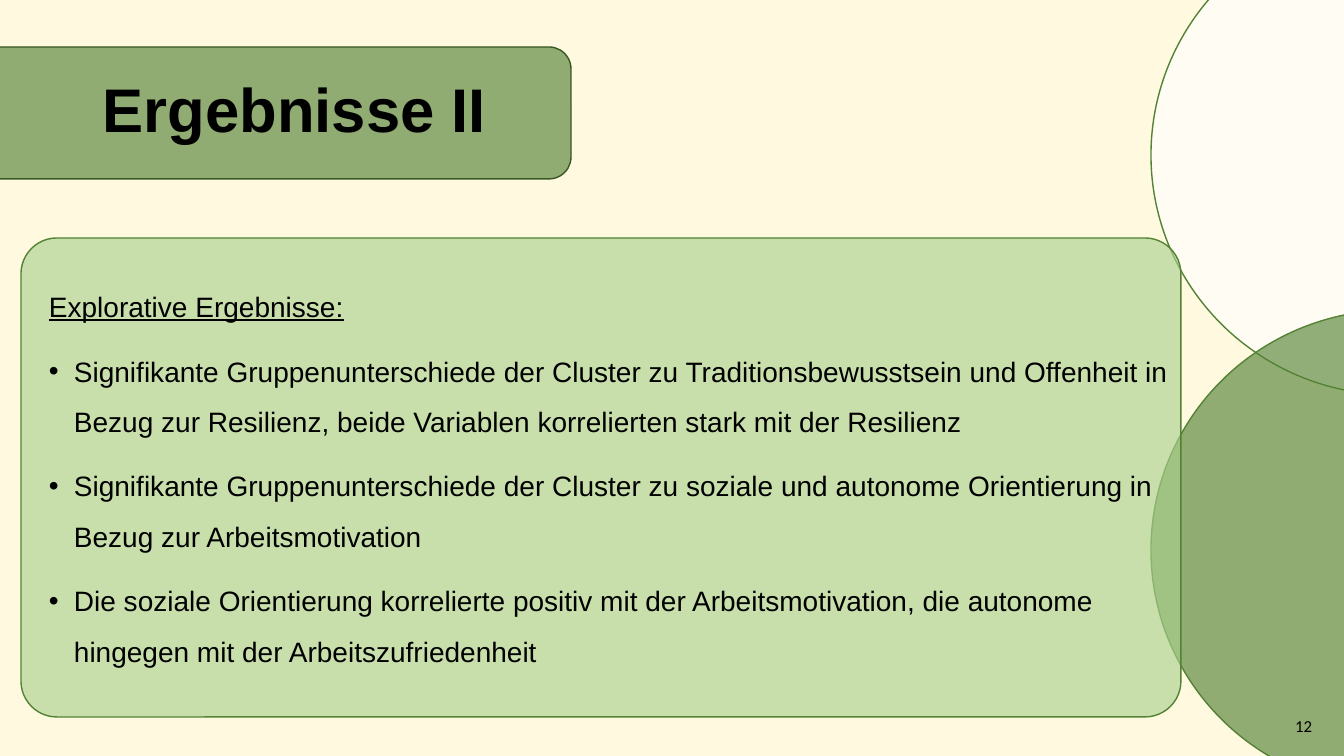
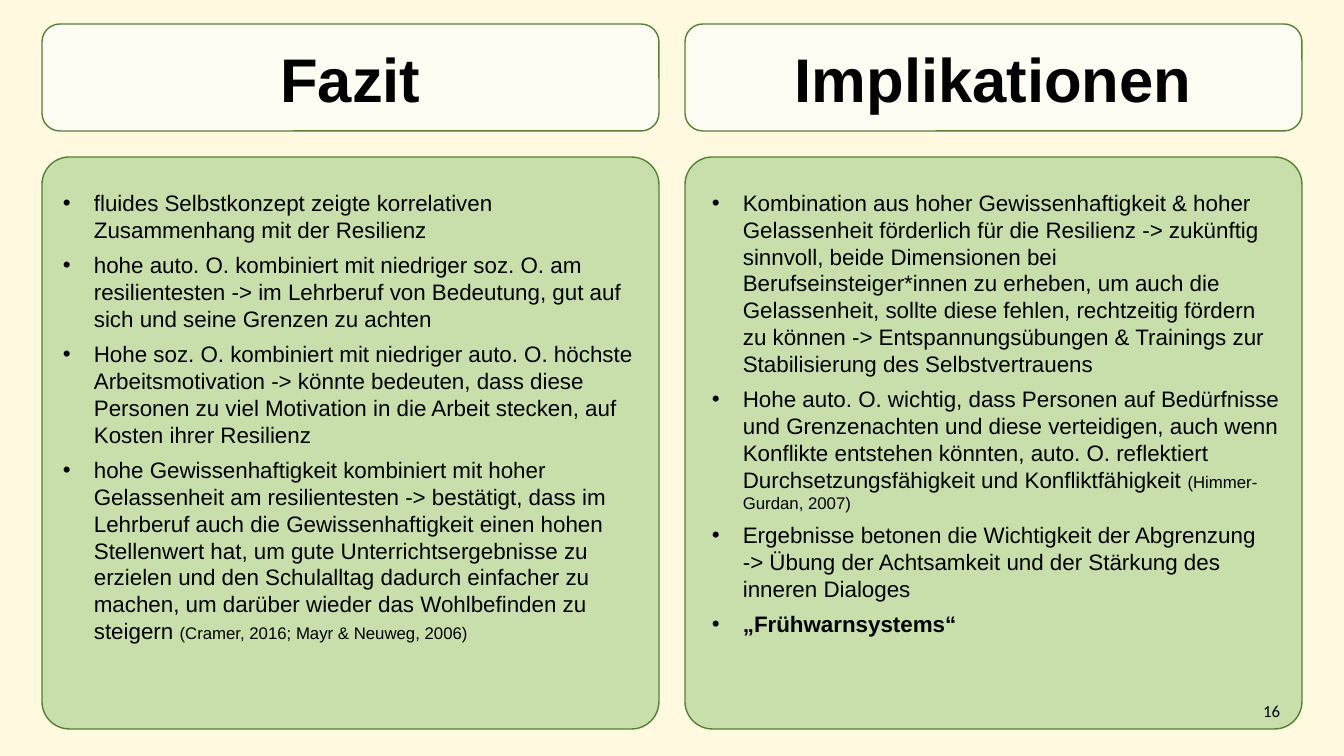
"""Build two result slides with green rounded panels on a cream background."""
from lxml import etree
from pptx import Presentation
from pptx import util as u
from pptx.dml.color import RGBColor
from pptx.enum import shapes, text
from pptx.oxml.ns import qn

W, H = 1344, 756
PX = 12192000 / W
CREAM, WHITE, BLACK = "FFF9E0", "FFFFFF", "000000"
GREEN, DARK, LIGHT = "548235", "385723", "A9D18E"
ROUND, OVAL = shapes.MSO_SHAPE.ROUNDED_RECTANGLE, shapes.MSO_SHAPE.OVAL
LEFT, CENTER, RIGHT = text.PP_ALIGN.LEFT, text.PP_ALIGN.CENTER, text.PP_ALIGN.RIGHT
MIDDLE = text.MSO_ANCHOR.MIDDLE

TITLE = {"size": u.Pt(44), "name": "Arial", "bold": True}
BODY = {"size": u.Pt(20), "name": "Arial"}
SMALL = {"size": u.Pt(16), "name": "Arial"}
CITE = {"size": u.Pt(12), "name": "Arial"}
NUMBER = {"size": u.Pt(12), "name": "Calibri"}

RESULTS = {
    "title": "Ergebnisse II",
    "lead": "Explorative Ergebnisse:",
    "points": [
        "Signifikante Gruppenunterschiede der Cluster zu Traditionsbewusstsein und Offenheit in "
        "Bezug zur Resilienz, beide Variablen korrelierten stark mit der Resilienz",
        "Signifikante Gruppenunterschiede der Cluster zu soziale und autonome Orientierung in "
        "Bezug zur Arbeitsmotivation",
        "Die soziale Orientierung korrelierte positiv mit der Arbeitsmotivation, die autonome "
        "hingegen mit der Arbeitszufriedenheit",
    ],
    "number": "12",
}
CONCLUSION = {
    "columns": [
        ("Fazit", (53, 601), [
            [("fluides Selbstkonzept zeigte korrelativen Zusammenhang mit der Resilienz", {})],
            [("hohe auto. O. kombiniert mit niedriger soz. O. am resilientesten -> im Lehrberuf "
              "von Bedeutung, gut auf sich und seine Grenzen zu achten", {})],
            [("Hohe soz. O. kombiniert mit niedriger auto. O. höchste Arbeitsmotivation -> könnte "
              "bedeuten, dass diese Personen zu viel Motivation in die Arbeit stecken, auf Kosten "
              "ihrer Resilienz", {})],
            [("hohe Gewissenhaftigkeit kombiniert mit hoher Gelassenheit am resilientesten -> "
              "bestätigt, dass im Lehrberuf auch die Gewissenhaftigkeit einen hohen Stellenwert "
              "hat, um gute Unterrichtsergebnisse zu erzielen und den Schulalltag dadurch "
              "einfacher zu machen, um darüber wieder das Wohlbefinden zu steigern ", {}),
             ("(Cramer, 2016; Mayr & Neuweg, 2006)", CITE)],
        ]),
        ("Implikationen", (702, 589), [
            [("Kombination aus hoher Gewissenhaftigkeit & hoher Gelassenheit förderlich für die "
              "Resilienz -> zukünftig sinnvoll, beide Dimensionen bei Berufseinsteiger*innen zu "
              "erheben, um auch die Gelassenheit, sollte diese fehlen, rechtzeitig fördern zu "
              "können -> Entspannungsübungen & Trainings zur Stabilisierung des "
              "Selbstvertrauens", {})],
            [("Hohe auto. O. wichtig, dass Personen auf Bedürfnisse und Grenzenachten und diese "
              "verteidigen, auch wenn Konflikte entstehen könnten, auto. O. reflektiert "
              "Durchsetzungsfähigkeit und Konfliktfähigkeit ", {}),
             ("(Himmer-Gurdan, 2007)", CITE)],
            [("Ergebnisse betonen die Wichtigkeit der Abgrenzung\n-> Übung der Achtsamkeit und "
              "der Stärkung des inneren Dialoges", {})],
            [("„Frühwarnsystems“", {"bold": True})],
        ]),
    ],
    "number": "16",
}


def px(n):
    """Turn px into EMU."""
    return u.Emu(round(n * PX))


def rgb(value):
    """Turn a hex string into a colour."""
    return RGBColor.from_string(value)


def add_panel(s, kind, box, fill, line=GREEN, corner=None):
    """Add a translucent outlined shape."""
    sp = s.shapes.add_shape(kind, *map(px, box))
    sp.shadow.inherit = False
    sp.fill.solid()
    sp.fill.fore_color.rgb = rgb(fill)
    color = sp.fill._xPr.find(qn("a:solidFill"))[0]
    etree.SubElement(color, qn("a:alpha"), val="64000")
    sp.line.color.rgb = rgb(line)
    sp.line.width = u.Pt(1)
    if corner:
        sp.adjustments[0] = corner
    return sp


def add_box(s, box):
    """Add an empty wrapping text box and return its text frame."""
    tf = s.shapes.add_textbox(*map(px, box)).text_frame
    tf.word_wrap = True
    return tf


def add_paragraph(tf, runs, font, bullet=0, **layout):
    """Fill the next paragraph; bullet is the hanging indent in px."""
    p = tf.paragraphs[0]
    if p.runs:
        p = tf.add_paragraph()
    for name, value in {"alignment": LEFT, **layout}.items():
        setattr(p, name, value)
    if bullet:
        pPr = p._p.get_or_add_pPr()
        pPr.set("marL", str(px(bullet)))
        pPr.set("indent", str(-px(bullet)))
        etree.SubElement(pPr, qn("a:buFont"), typeface="Arial")
        etree.SubElement(pPr, qn("a:buChar"), char="•")
    for words, extra in runs:
        for i, line in enumerate(words.split("\n")):
            if i:
                p.add_line_break()
            r = p.add_run()
            r.text = line
            r.font.color.rgb = rgb(BLACK)
            for name, value in {**font, **extra}.items():
                setattr(r.font, name, value)


def add_number(s, number, left, top):
    """Add the slide number, flush right."""
    tf = add_box(s, (left, top, 302, 40))
    tf.vertical_anchor = MIDDLE
    add_paragraph(tf, [(number, {})], NUMBER, alignment=RIGHT)


def build_results(s, data):
    """Draw the title band, the circles and the wide panel."""
    add_panel(s, ROUND, (-22, 47, 593, 132), GREEN, DARK)
    for top, fill in ((-85, WHITE), (310, GREEN)):
        add_panel(s, OVAL, (1151, top, 485, 480), fill)
    add_panel(s, ROUND, (21, 238, 1160, 479), LIGHT, corner=0.075)
    tf = add_box(s, (93, 40, 447, 146))
    tf.vertical_anchor = MIDDLE
    add_paragraph(tf, [(data["title"], {})], TITLE, line_spacing=0.9)
    tf = add_box(s, (39, 288, 1159, 430))
    gap = {"space_before": u.Pt(10)}
    add_paragraph(tf, [(data["lead"], {"underline": True})], BODY, line_spacing=0.9, **gap)
    for point in data["points"]:
        add_paragraph(tf, [(point, {})], BODY, bullet=25, line_spacing=1.5, **gap)
    add_number(s, data["number"], 1020, 706)


def build_conclusion(s, data):
    """Draw two equal columns, each a heading card over a bullet panel."""
    margin, gap = 42, 26
    width = (W - 2 * margin - gap) / 2
    for i, (heading, (left, text_width), points) in enumerate(data["columns"]):
        x = margin + i * (width + gap)
        tf = add_panel(s, ROUND, (x, 24, width, 107), WHITE).text_frame
        tf.vertical_anchor = MIDDLE
        add_paragraph(tf, [(heading, {})], TITLE, alignment=CENTER)
        add_panel(s, ROUND, (x, 157, width, 572), LIGHT, corner=0.048)
        tf = add_box(s, (left, 184, text_width, 500))
        for runs in points:
            add_paragraph(tf, runs, SMALL, bullet=31, space_before=u.Pt(6))
    add_number(s, data["number"], 988, 691)


def main():
    """Build and save the presentation."""
    prs = Presentation()
    prs.slide_width, prs.slide_height = px(W), px(H)
    fill = prs.slide_master.background.fill
    fill.solid()
    fill.fore_color.rgb = rgb(CREAM)
    for build, data in ((build_results, RESULTS), (build_conclusion, CONCLUSION)):
        build(prs.slides.add_slide(prs.slide_layouts[6]), data)
    prs.save("out.pptx")


if __name__ == "__main__":
    main()
